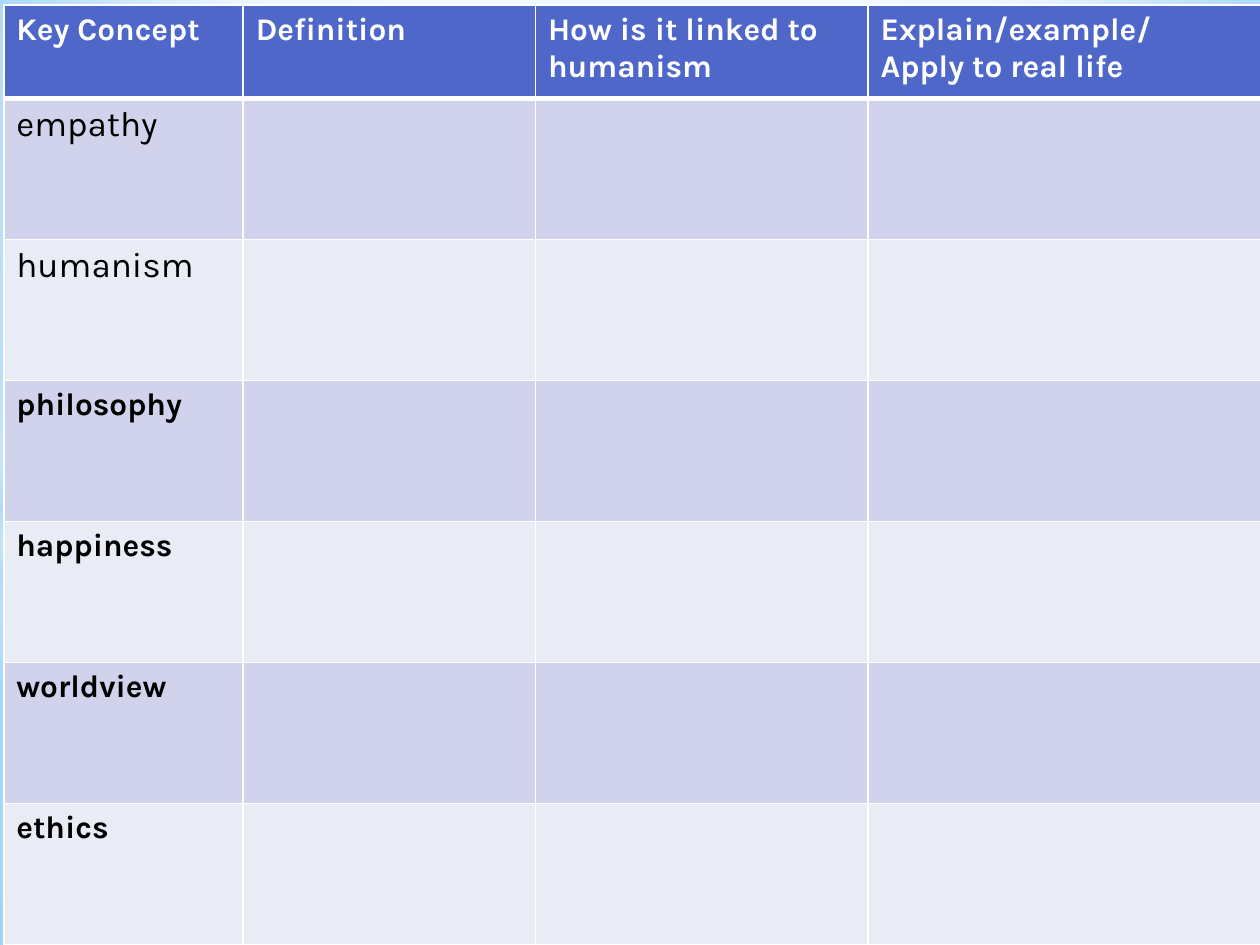
from lxml import etree
from pptx import Presentation
from pptx.dml.color import RGBColor
from pptx.enum.shapes import MSO_SHAPE
from pptx.oxml.ns import qn
from pptx.util import Inches, Pt

RECT, OVAL = MSO_SHAPE.RECTANGLE, MSO_SHAPE.OVAL
WHITE = RGBColor(0xFF, 0xFF, 0xFF)
BLACK = RGBColor(0x00, 0x00, 0x00)
BLUE = RGBColor(0x4E, 0x67, 0xC8)
DARK = RGBColor(0xD0, 0xD3, 0xEB)
LIGHT = RGBColor(0xE9, 0xEB, 0xF5)
SKY = RGBColor(0xB4, 0xDC, 0xFA)
PALE = RGBColor(0x9E, 0xD5, 0xFF)
DEEP = RGBColor(0x5B, 0xB9, 0xFF)
MID = (50, 50, 50, 50)


def shade(fill, node, stops, focus):
    """Gradient of (place, colour, opacity); circular, or downward without a focus."""
    fill.solid()
    old = node.find(qn("a:solidFill"))
    grad = etree.Element(qn("a:gradFill"), rotWithShape="1")
    steps = etree.SubElement(grad, qn("a:gsLst"))
    for place, tone, alpha in stops:
        step = etree.SubElement(steps, qn("a:gs"), pos=str(place * 1000))
        color = etree.SubElement(step, qn("a:srgbClr"), val=str(tone))
        etree.SubElement(color, qn("a:alpha"), val=str(alpha * 1000))
    if focus:
        ring = etree.SubElement(grad, qn("a:path"), path="circle")
        sides = {k: str(v * 1000) for k, v in zip("ltrb", focus)}
        etree.SubElement(ring, qn("a:fillToRect"), **sides)
    else:
        etree.SubElement(grad, qn("a:lin"), ang="5400000", scaled="0")
    node.replace(old, grad)


def edge(cell, widths):
    """White cell borders, widths in points: left, right, top, bottom."""
    props = cell._tc.get_or_add_tcPr()
    for i, (side, width) in enumerate(zip("LRTB", widths)):
        line = etree.Element(qn("a:ln" + side), w=str(Pt(width)))
        paint = etree.SubElement(line, qn("a:solidFill"))
        etree.SubElement(paint, qn("a:srgbClr"), val=str(WHITE))
        props.insert(i, line)


prs = Presentation()
prs.slide_width, prs.slide_height = Inches(10), Inches(7.5)
slide = prs.slides.add_slide(prs.slide_layouts[6])

# Background
back = slide.background.fill
back.solid()
shade(back, slide._element.cSld.find(qn("p:bg")).find(qn("p:bgPr")),
      [(0, PALE, 100), (60, WHITE, 100), (100, DEEP, 100)], (20, 10, 20, 60))

# Soft light over the background: kind, top, height, focus, stops
glows = [
    (RECT, 4.23, 3.27, MID, [(0, WHITE, 91), (37, WHITE, 76), (100, SKY, 79)]),
    (RECT, 0, 4.23, MID, [(0, WHITE, 89), (48, WHITE, 62), (100, SKY, 79)]),
    (RECT, 2.9, 2.5, None, [(0, WHITE, 0), (29, WHITE, 30), (45, SKY, 40),
                            (55, WHITE, 26), (65, SKY, 60), (100, WHITE, 0)]),
    (OVAL, 1.75, 5.58, MID, [(0, WHITE, 100), (54, WHITE, 0)]),
]
for kind, top, high, focus, stops in glows:
    glow = slide.shapes.add_shape(kind, 0, Inches(top), prs.slide_width, Inches(high))
    glow.shadow.inherit = False
    glow.line.fill.background()
    shade(glow.fill, glow._element.spPr, stops, focus)

# Table grid
heads = ["Key Concept", "Definition", "How is it linked to humanism",
         "Explain/example/\nApply to real life"]
terms = ["empathy", "humanism", "philosophy", "happiness", "worldview", "ethics"]
rows = [heads] + [[term, "", "", ""] for term in terms]
cols = [1.9, 2.32, 2.64, 3.12]
highs = [0.74] + [1.12] * len(terms)
table = slide.shapes.add_table(len(rows), len(cols), Inches(0.03), Inches(0.04),
                               Inches(sum(cols)), Inches(sum(highs))).table
for col, width in zip(table.columns, cols):
    col.width = Inches(width)
for row, high in zip(table.rows, highs):
    row.height = Inches(high)

# Cells: header, two large plain terms, then bold terms
for r, texts in enumerate(rows):
    plain = r in (1, 2)
    style = {"name": "Karla", "size": Pt(20 if plain else 18), "bold": not plain}
    tone = BLUE if r == 0 else DARK if r % 2 else LIGHT
    for c, text in enumerate(texts):
        cell = table.cell(r, c)
        cell.fill.solid()
        cell.fill.fore_color.rgb = tone
        edge(cell, (1, 1, 3 if r == 1 else 1, 3 if r == 0 else 1))
        if not text:
            continue
        cell.text = text
        for para in cell.text_frame.paragraphs:
            font = para.runs[0].font
            for key, value in style.items():
                setattr(font, key, value)
            font.color.rgb = BLACK if r else WHITE

prs.save("out.pptx")
